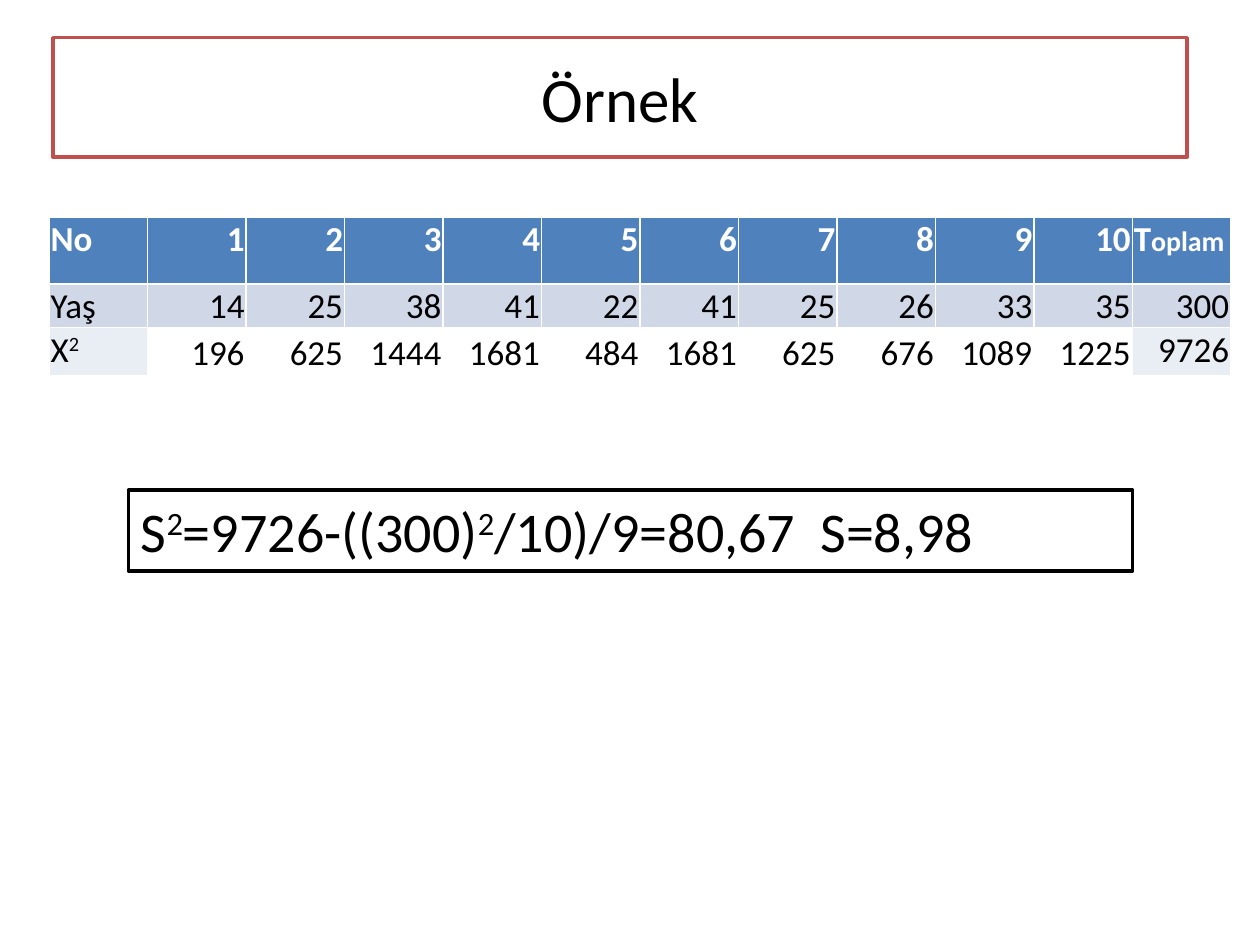
import pptx
import pptx.dml.color
import pptx.enum.text
import pptx.oxml
import pptx.oxml.ns
import pptx.util
from dataclasses import dataclass

Cm, Pt = pptx.util.Cm, pptx.util.Pt
RGB = pptx.dml.color.RGBColor.from_string
ALIGN = pptx.enum.text.PP_ALIGN
ANCHOR = pptx.enum.text.MSO_ANCHOR


@dataclass(frozen=True)
class Theme:
    font: str = "Calibri"
    ink: str = "000000"
    paper: str = "FFFFFF"
    accent: str = "C0504D"
    header: str = "4F81BD"
    band: str = "D0D8E8"
    pale: str = "E9EDF4"
    title: int = 36
    formula: int = 32
    cell: int = 20
    small: int = 16


theme = Theme()


def write(p, parts, size, color, bold=False, align=ALIGN.LEFT):
    p.alignment = align
    p.font.name = theme.font
    p.font.size = Pt(size)
    p.font.bold = bold
    p.font.color.rgb = RGB(color)
    for i, part in enumerate(parts):
        r = p.add_run()
        r.text = part
        if i % 2:
            r.font._element.set("baseline", "30000")


def frame(sp, color):
    sp.fill.solid()
    sp.fill.fore_color.rgb = RGB(theme.paper)
    sp.line.color.rgb = RGB(color)
    sp.line.width = Pt(2)


prs = pptx.Presentation()
prs.slide_width, prs.slide_height = Cm(25.4), Cm(19.05)
s = prs.slides.add_slide(prs.slide_layouts[5])

sp = s.shapes.title
sp.left, sp.top, sp.width, sp.height = Cm(1.07), Cm(0.76), Cm(22.86), Cm(2.41)
frame(sp, theme.accent)
tf = sp.text_frame
tf.vertical_anchor = ANCHOR.MIDDLE
write(tf.paragraphs[0], ["Örnek"], theme.title, theme.ink, align=ALIGN.CENTER)

sp = s.shapes.add_textbox(Cm(2.59), Cm(9.88), Cm(20.24), Cm(1.63))
frame(sp, theme.ink)
tf = sp.text_frame
tf.word_wrap = True
formula = ["S", "2", "=9726-((300)", "2", "/10)/9=80,67  S=8,98"]
write(tf.paragraphs[0], formula, theme.formula, theme.ink)

ages = [14, 25, 38, 41, 22, 41, 25, 26, 33, 35]
rows = [
    ["No", *range(1, len(ages) + 1), "T"],
    ["Yaş", *ages, sum(ages)],
    ["X", *(age ** 2 for age in ages), sum(age ** 2 for age in ages)],
]
heights = [1.35, 0.86, 0.97]
fills = [theme.header, theme.band, theme.pale]
last = len(ages) + 1

table = s.shapes.add_table(
    len(rows), last + 1, Cm(0.99), Cm(4.37), Cm(23.82), Cm(sum(heights))
).table
table.first_row = False
table.horz_banding = False
for row, height in zip(table.rows, heights):
    row.height = Cm(height)

for y, values in enumerate(rows):
    for x, value in enumerate(values):
        cell = table.cell(y, x)
        cell.margin_left = cell.margin_right = cell.margin_top = Cm(0.03)
        cell.margin_bottom = 0
        inner_square = y == 2 and 0 < x < last
        cell.vertical_anchor = ANCHOR.BOTTOM if inner_square else ANCHOR.TOP
        for side in "LRTB":
            thick = (y, side) in [(0, "B"), (1, "T")]
            cell._tc.get_or_add_tcPr().append(pptx.oxml.parse_xml(
                f'<a:ln{side} {pptx.oxml.ns.nsdecls("a")} w="{Pt(1.5 if thick else 1)}">'
                f'<a:solidFill><a:srgbClr val="{theme.paper}"/></a:solidFill></a:ln{side}>'
            ))
        if inner_square:
            cell.fill.background()
        else:
            cell.fill.solid()
            cell.fill.fore_color.rgb = RGB(fills[y])
        parts = ["X", "2"] if value == "X" else [str(value)]
        left = x == 0 or (y == 0 and x == last)
        write(cell.text_frame.paragraphs[0], parts, theme.cell,
              theme.paper if y == 0 else theme.ink, bold=y == 0,
              align=ALIGN.LEFT if left else ALIGN.RIGHT)

r = table.cell(0, last).text_frame.paragraphs[0].add_run()
r.text = "oplam"
r.font.size = Pt(theme.small)

prs.save("out.pptx")
